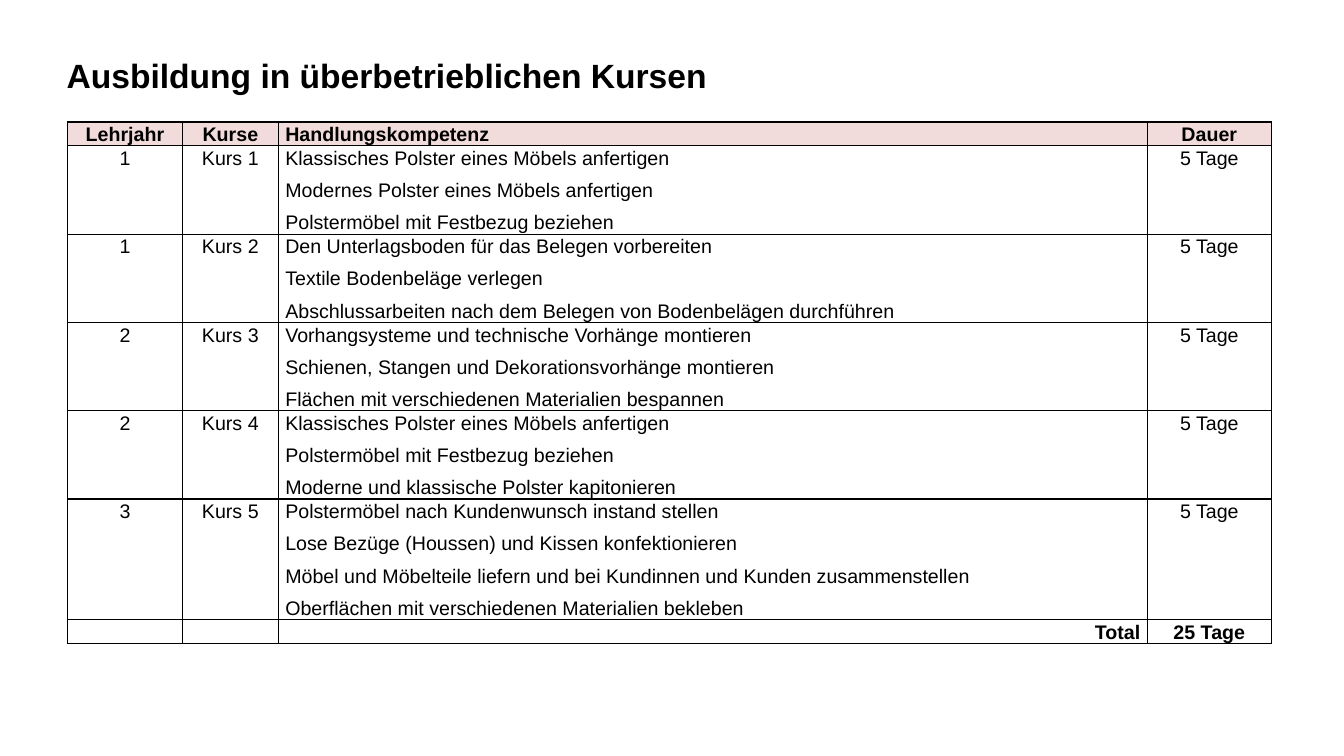
from dataclasses import dataclass

from lxml import etree
from pptx import Presentation
from pptx.dml.color import RGBColor
from pptx.enum.text import MSO_ANCHOR, PP_ALIGN
from pptx.oxml.ns import qn
from pptx.util import Inches, Pt

LEFT, CENTER, RIGHT = PP_ALIGN.LEFT, PP_ALIGN.CENTER, PP_ALIGN.RIGHT
MIDDLE = MSO_ANCHOR.MIDDLE
COLORS = {"text": "000000", "border": "000000", "header": "F2DBDB"}
FONT = "Arial"
TITLE_ONLY = 5
COLUMN_WIDTHS = (1.14, 0.95, 8.62, 1.23)


@dataclass(frozen=True)
class CourseRow:
    """One table row with the skills listed as separate paragraphs."""

    year: str
    course: str
    skills: tuple[str, ...]
    duration: str
    height: float = 0.85
    bold: bool = False
    fill: str | None = None
    skills_align: PP_ALIGN = LEFT


ROWS = (
    CourseRow("Lehrjahr", "Kurse", ("Handlungskompetenz",), "Dauer",
              height=0.22, bold=True, fill="header"),
    CourseRow("1", "Kurs 1", (
        "Klassisches Polster eines Möbels anfertigen",
        "Modernes Polster eines Möbels anfertigen",
        "Polstermöbel mit Festbezug beziehen"), "5 Tage"),
    CourseRow("1", "Kurs 2", (
        "Den Unterlagsboden für das Belegen vorbereiten",
        "Textile Bodenbeläge verlegen",
        "Abschlussarbeiten nach dem Belegen von Bodenbelägen durchführen"), "5 Tage"),
    CourseRow("2", "Kurs 3", (
        "Vorhangsysteme und technische Vorhänge montieren",
        "Schienen, Stangen und Dekorationsvorhänge montieren",
        "Flächen mit verschiedenen Materialien bespannen"), "5 Tage"),
    CourseRow("2", "Kurs 4", (
        "Klassisches Polster eines Möbels anfertigen",
        "Polstermöbel mit Festbezug beziehen",
        "Moderne und klassische Polster kapitonieren"), "5 Tage"),
    CourseRow("3", "Kurs 5", (
        "Polstermöbel nach Kundenwunsch instand stellen",
        "Lose Bezüge (Houssen) und Kissen konfektionieren",
        "Möbel und Möbelteile liefern und bei Kundinnen und Kunden zusammenstellen",
        "Oberflächen mit verschiedenen Materialien bekleben"), "5 Tage", height=1.17),
    CourseRow("", "", ("Total",), "25 Tage",
              height=0.22, bold=True, skills_align=RIGHT),
)


def style_font(para, size: float, bold: bool) -> None:
    """Set the typeface, size, weight and colour of a paragraph."""
    para.font.name = FONT
    para.font.size = Pt(size)
    para.font.bold = bold
    para.font.color.rgb = RGBColor.from_string(COLORS["text"])


def add_borders(cell) -> None:
    """Draw a thin line on all four sides of a cell."""
    properties = cell._tc.get_or_add_tcPr()
    for position, side in enumerate(("lnL", "lnR", "lnT", "lnB")):
        line = etree.Element(qn(f"a:{side}"), w=str(Pt(1)))
        fill = etree.SubElement(line, qn("a:solidFill"))
        etree.SubElement(fill, qn("a:srgbClr"), val=COLORS["border"])
        properties.insert(position, line)


def fill_cell(cell, lines: tuple[str, ...], align: PP_ALIGN, row: CourseRow) -> None:
    """Write the lines of a cell and format it."""
    cell.margin_left = cell.margin_right = Inches(0.07)
    cell.margin_top = cell.margin_bottom = 0
    if row.fill:
        cell.fill.solid()
        cell.fill.fore_color.rgb = RGBColor.from_string(COLORS[row.fill])
    else:
        cell.fill.background()
    add_borders(cell)
    cell.text_frame.text = "\n".join(lines)
    for index, para in enumerate(cell.text_frame.paragraphs):
        para.alignment = align
        para.line_spacing = Pt(17)
        para.space_before = Pt(3 if index else 0)
        para.space_after = Pt(3)
        style_font(para, 14, row.bold)


def add_title(page) -> None:
    """Place and format the title placeholder."""
    title = page.shapes.title
    title.left, title.top = Inches(0.56), Inches(0.4)
    title.width, title.height = Inches(12.53), Inches(0.74)
    title.text_frame.text = "Ausbildung in überbetrieblichen Kursen"
    title.text_frame.vertical_anchor = MIDDLE
    para = title.text_frame.paragraphs[0]
    para.alignment = LEFT
    para.line_spacing = 0.9
    style_font(para, 24, True)


def add_course_table(page) -> None:
    """Add the table of courses."""
    table = page.shapes.add_table(
        len(ROWS), len(COLUMN_WIDTHS), Inches(0.67), Inches(1.21),
        Inches(sum(COLUMN_WIDTHS)), Inches(sum(row.height for row in ROWS))).table
    table.horz_banding = False
    table.first_row = False
    for column, width in zip(table.columns, COLUMN_WIDTHS):
        column.width = Inches(width)
    for table_row, row in zip(table.rows, ROWS):
        table_row.height = Inches(row.height)
        contents = (((row.year,), CENTER), ((row.course,), CENTER),
                    (row.skills, row.skills_align), ((row.duration,), CENTER))
        for cell, (lines, align) in zip(table_row.cells, contents):
            fill_cell(cell, lines, align, row)


def main() -> None:
    """Build and save the deck."""
    deck = Presentation()
    deck.slide_width, deck.slide_height = Inches(13.33), Inches(7.5)
    page = deck.slides.add_slide(deck.slide_layouts[TITLE_ONLY])
    add_title(page)
    add_course_table(page)
    deck.save("out.pptx")


if __name__ == "__main__":
    main()
